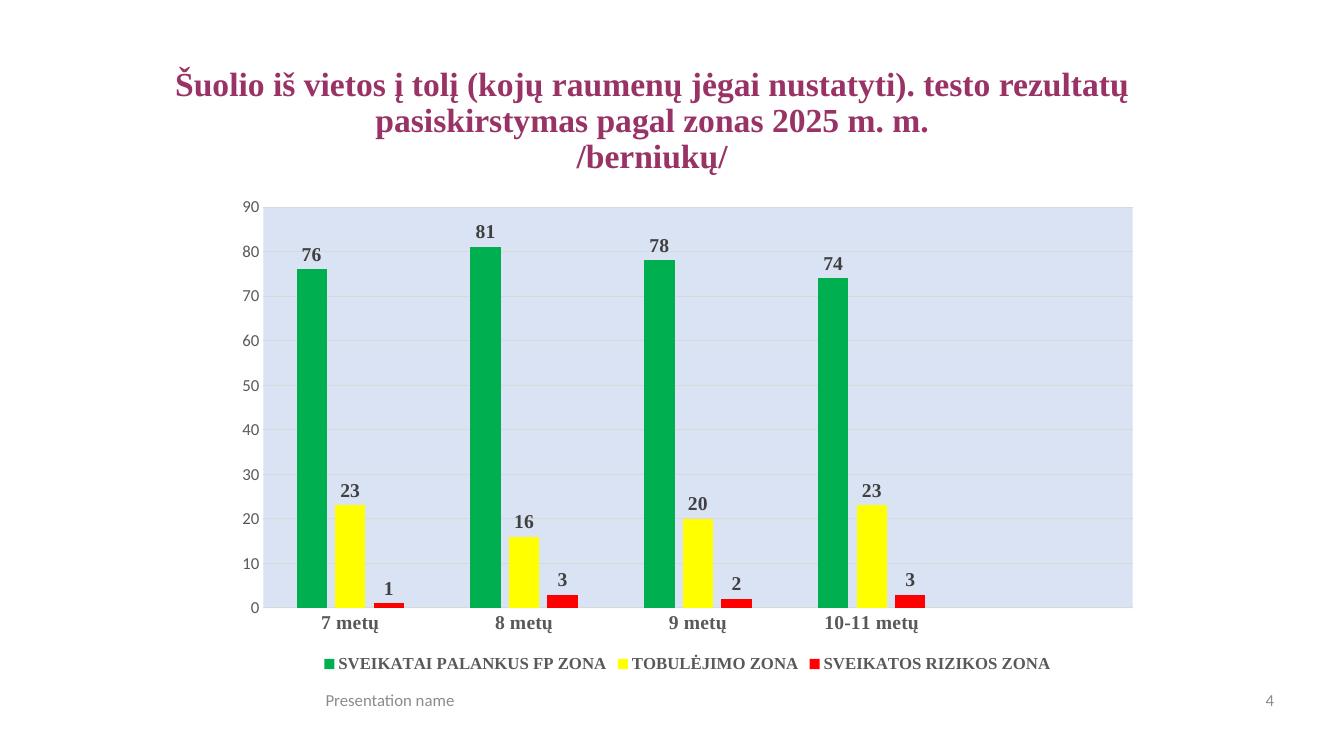
from lxml import etree
from pptx import Presentation
from pptx.chart.data import CategoryChartData
from pptx.dml.color import RGBColor
from pptx.enum.chart import XL_CHART_TYPE, XL_LABEL_POSITION, XL_LEGEND_POSITION, XL_TICK_MARK
from pptx.enum.text import MSO_ANCHOR, MSO_AUTO_SIZE, PP_ALIGN
from pptx.oxml import parse_xml
from pptx.oxml.ns import nsdecls
from pptx.util import Cm, Pt

COLUMNS = XL_CHART_TYPE.COLUMN_CLUSTERED
OUTSIDE = XL_LABEL_POSITION.OUTSIDE_END
BOTTOM = XL_LEGEND_POSITION.BOTTOM
NO_TICK = XL_TICK_MARK.NONE
CENTER, RIGHT = PP_ALIGN.CENTER, PP_ALIGN.RIGHT

PLUM = RGBColor(0x99, 0x33, 0x66)
GREY = RGBColor(0x8C, 0x8C, 0x8C)
DARK_GREY = RGBColor(0x59, 0x59, 0x59)
LABEL_GREY = RGBColor(0x40, 0x40, 0x40)
LINE_GREY = RGBColor(0xD9, 0xD9, 0xD9)
PLOT_BLUE = RGBColor(0xDA, 0xE3, 0xF3)
GREEN = RGBColor(0x00, 0xB0, 0x50)
YELLOW = RGBColor(0xFF, 0xFF, 0x00)
RED = RGBColor(0xFF, 0x00, 0x00)
SERIF, SANS = "Times New Roman", "Calibri"

# Content
TITLE = ("Šuolio iš vietos į tolį (kojų raumenų jėgai nustatyti). testo rezultatų "
         "pasiskirstymas pagal zonas 2025 m. m.\v/berniukų/")
AGES = ["7 metų", "8 metų", "9 metų", "10-11 metų", ""]
ZONES = [
    ("SVEIKATAI PALANKUS FP ZONA", (76, 81, 78, 74, None), GREEN),
    ("TOBULĖJIMO ZONA", (23, 16, 20, 23, None), YELLOW),
    ("SVEIKATOS RIZIKOS ZONA", (1, 3, 2, 3, None), RED),
]
FOOTERS = [  # text, left, width, alignment
    ("Presentation name", Cm(1.83), Cm(16), CENTER),
    ("4", Cm(31.04), Cm(1.32), RIGHT),
]


def style_font(font, name, size, color, bold=False):
    font.name, font.size, font.bold = name, Pt(size), bold
    font.color.rgb = color


def style_line(line):
    line.color.rgb = LINE_GREY
    line.width = Pt(0.75)


presentation = Presentation()
presentation.slide_width, presentation.slide_height = Cm(33.87), Cm(19.05)
slide = presentation.slides.add_slide(presentation.slide_layouts[5])

# Title
title = slide.shapes.title
title.left, title.top, title.width, title.height = Cm(1.83), Cm(1.4), Cm(29.21), Cm(3.33)
frame = title.text_frame
frame.text = TITLE
frame.auto_size = MSO_AUTO_SIZE.NONE
frame.vertical_anchor = MSO_ANCHOR.MIDDLE
paragraph = frame.paragraphs[0]
paragraph.alignment = CENTER
paragraph.line_spacing = 0.9
for run in paragraph.runs:
    style_font(run.font, SERIF, 24, PLUM, True)

# Footer and slide number
for text, left, width, alignment in FOOTERS:
    frame = slide.shapes.add_textbox(left, Cm(17.25), width, Cm(1)).text_frame
    frame.word_wrap = True
    frame.text = text
    paragraph = frame.paragraphs[0]
    paragraph.alignment = alignment
    style_font(paragraph.runs[0].font, SANS, 12, GREY)

# Chart
data = CategoryChartData()
data.categories = AGES
for name, values, color in ZONES:
    data.add_series(name, values)
chart = slide.shapes.add_chart(COLUMNS, Cm(5.64), Cm(4.72), Cm(23.37), Cm(12.34), data).chart
chart.has_title = False
chart.font.name, chart.font.size = SANS, Pt(10)
chart.has_legend = True
chart.legend.position = BOTTOM
chart.legend.include_in_layout = False
style_font(chart.legend.font, SERIF, 12, DARK_GREY, True)

# Columns and their labels
plot = chart.plots[0]
plot.gap_width, plot.overlap = 219, -27
plot.vary_by_categories = False
for series, (name, values, color) in zip(plot.series, ZONES):
    series.format.fill.solid()
    series.format.fill.fore_color.rgb = color
    labels = series.data_labels
    labels.show_value = True
    labels.position = OUTSIDE
    style_font(labels.font, SERIF, 14, LABEL_GREY, True)

# Axes
ages, scale = chart.category_axis, chart.value_axis
for axis in (ages, scale):
    axis.major_tick_mark = axis.minor_tick_mark = NO_TICK
style_font(ages.tick_labels.font, SERIF, 14, DARK_GREY, True)
style_font(scale.tick_labels.font, SANS, 12, DARK_GREY)
style_line(ages.format.line)
scale.format.line.fill.background()
scale.minimum_scale, scale.maximum_scale, scale.major_unit = 0, 90, 10
scale.has_major_gridlines = True
style_line(scale.major_gridlines.format.line)

# Plot area background
plot_area = ages._element.getparent()
properties = parse_xml(f"<c:spPr {nsdecls('c', 'a')}/>")
fill = etree.SubElement(properties, f"{{{properties.nsmap['a']}}}solidFill")
etree.SubElement(fill, f"{{{properties.nsmap['a']}}}srgbClr", val=str(PLOT_BLUE))
plot_area.append(properties)

presentation.save("out.pptx")
